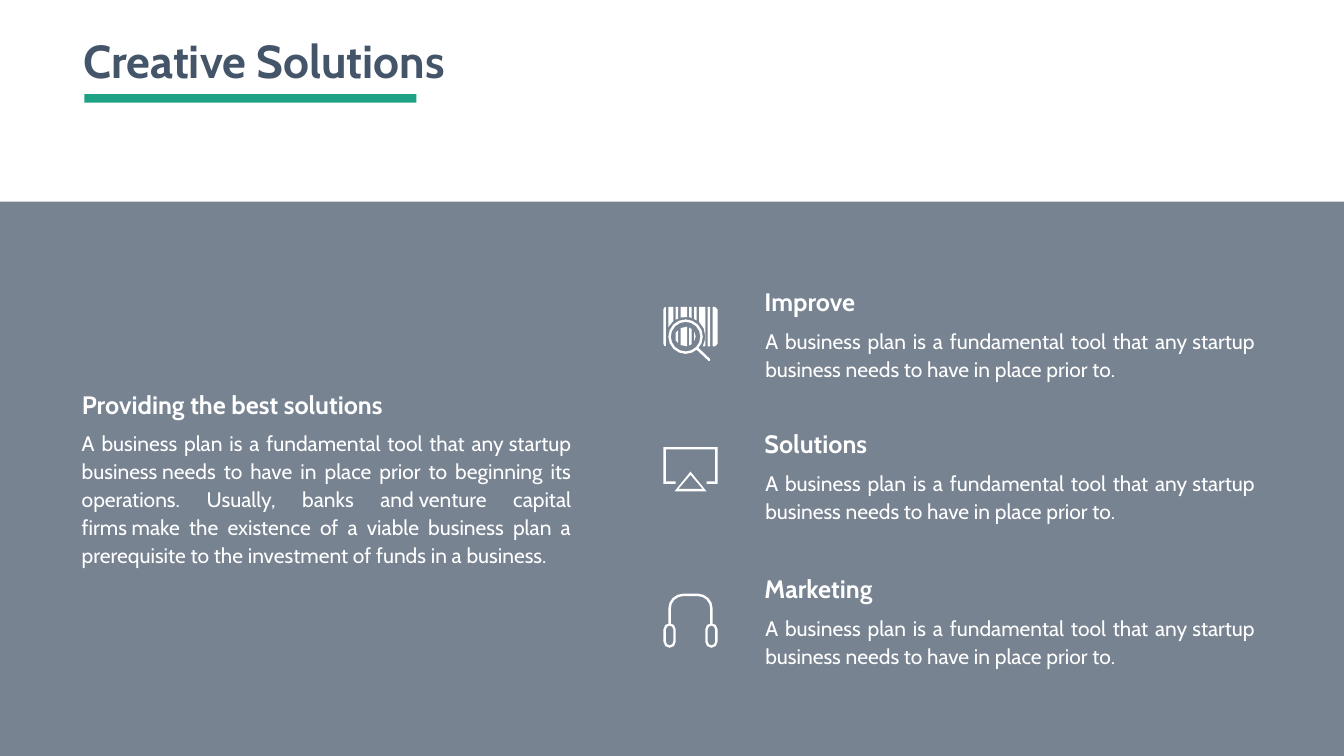
import math
from dataclasses import dataclass

import pptx
import pptx.dml.color
import pptx.enum.shapes
import pptx.enum.text
import pptx.oxml.ns
import pptx.util
from lxml import etree

Cm, Pt = pptx.util.Cm, pptx.util.Pt
Color = pptx.dml.color.RGBColor
Align = pptx.enum.text.PP_ALIGN
Anchor = pptx.enum.text.MSO_ANCHOR


@dataclass(frozen=True)
class Theme:
    font: str = "Cabin"
    slate: Color = Color(0x44, 0x54, 0x69)
    green: Color = Color(0x1E, 0xA1, 0x85)
    white: Color = Color(0xFF, 0xFF, 0xFF)
    title: int = 66
    heading: int = 36
    body: int = 30
    leading: int = 40


theme = Theme()
deck = pptx.Presentation()
deck.slide_width, deck.slide_height = Cm(67.72), Cm(38.1)
page = deck.slides.add_slide(deck.slide_layouts[6])


def write(text, left, top, width, height, size, color, body=False, middle=False, wrap=True):
    box = page.shapes.add_textbox(Cm(left), Cm(top), Cm(width), Cm(height))
    frame = box.text_frame
    frame.word_wrap = wrap
    frame.auto_size = pptx.enum.text.MSO_AUTO_SIZE.SHAPE_TO_FIT_TEXT
    frame.vertical_anchor = Anchor.MIDDLE if middle else Anchor.TOP
    para = frame.paragraphs[0]
    if body:
        frame.margin_left = frame.margin_right = Cm(0.61)
        frame.margin_top = frame.margin_bottom = Cm(0.3)
        para.alignment = Align.JUSTIFY
        para.line_spacing = Pt(theme.leading)
    span = para.add_run()
    span.text = text
    span.font.name = theme.font
    span.font.size = Pt(size)
    span.font.bold = not body
    span.font.color.rgb = color


def arc(x, y, radius, start, stop, steps=4):
    angles = [math.radians(start + (stop - start) * step / steps) for step in range(steps + 1)]
    return [(x + radius * math.cos(angle), y + radius * math.sin(angle)) for angle in angles]


rectangle = pptx.enum.shapes.MSO_SHAPE.RECTANGLE
panel = page.shapes.add_shape(rectangle, 0, Cm(10.16), deck.slide_width, Cm(27.94))
underline = page.shapes.add_shape(rectangle, Cm(4.25), Cm(4.75), Cm(16.73), Cm(0.43))
for shape, color in ((panel, theme.slate), (underline, theme.green)):
    shape.shadow.inherit = False
    shape.fill.solid()
    shape.fill.fore_color.rgb = color
    shape.line.fill.background()
panel_color = panel._element.spPr.find(".//" + pptx.oxml.ns.qn("a:srgbClr"))
etree.SubElement(panel_color, pptx.oxml.ns.qn("a:alpha"), val="72000")

hard_space = chr(160)
opening = (
    f"A business plan is a fundamental tool that any{hard_space}startup "
    f"business{hard_space}needs to have in place prior to"
)
write("Creative Solutions", 3.94, 1.52, 19.61, 3.07, theme.title, theme.slate, wrap=False)
write("Providing the best solutions", 3.88, 19.48, 18.82, 1.8, theme.heading, theme.white, middle=True)
write(
    f"{opening} beginning its operations. Usually, banks and{hard_space}venture capital "
    f"firms{hard_space}make the existence of a viable business plan a prerequisite to the "
    "investment of funds in a business.",
    3.51, 21.26, 25.88, 7.65, theme.body, theme.white, body=True,
)
for heading, top, width in (("Improve", 14.3, 5.28), ("Solutions", 21.47, 5.89), ("Marketing", 28.78, 6.3)):
    write(heading, 38.27, top, width, 1.8, theme.heading, theme.white, middle=True, wrap=False)
    write(f"{opening}.", 37.95, top + 1.82, 25.88, 3.38, theme.body, theme.white, body=True)

bars = [
    (5, 6, 0, 0, 4.7, 5.2), (7, 9.6, 0, 0, 4.1, 4.3), (10.4, 11.5, 0, 0, 4.5, 4.1),
    (12.5, 13.5, 0, 0, 5.5, 4.9), (18, 19, 0, 0, 16, 16), (5, 6, 10.5, 9.4, 14.7, 13.6),
    (7, 9.6, 8.6, 8, 16, 15.5), (10.4, 11.5, 8.4, 9, 15.1, 15.7), (12.5, 13.1, 10, 12, 12, 13.9),
]
barcode = [
    [(left, top_left), (right, top_right), (right, bottom_right), (left, bottom_left)]
    for left, right, top_left, top_right, bottom_right, bottom_left in bars
]
barcode += [
    [(0, 1), (0.3, 0.3), (1, 0), (1, 16), (0.3, 15.7), (0, 15)],
    [(2, 0), (4, 0), (4, 5.7), (2, 8.2)],
    [(14.5, 0), (17, 0), (17, 16), (16, 16), (16.8, 13.5), (17, 12), (16.4, 8.8), (14.5, 6.1)],
    [(20, 0), (21, 0), (22, 1), (22, 15), (21, 16), (20, 16)],
    arc(9, 12.07, 7, 0, 360, 16),
    arc(9, 12.07, 6, 0, 360, 16),
    [(13.5, 17.4), (14.3, 16.7), (19, 21.2), (18.9, 21.9), (18.3, 21.9)],
]
screen = [
    [(5, 15), (0, 15), (0, 0), (22, 0), (22, 15), (17.5, 15),
     (17.5, 14), (21, 14), (21, 1), (1, 1), (1, 14), (5, 14)],
    [(4.5, 18), (11, 10), (17.5, 18)],
    [(6.1, 17), (11, 11.3), (15.9, 17)],
]
headphones = [
    [(2, 12), *arc(8, 6, 6, 180, 270), *arc(14, 6, 6, 270, 360), (20, 12),
     (19, 12), *arc(14, 6, 5, 360, 270), *arc(8, 6, 5, 270, 180), (3, 12)],
]
for x in (2.5, 19.5):
    for radius in (2.5, 1.5):
        headphones.append(arc(x, 14.5, radius, 180, 360) + arc(x, 19.5, radius, 0, 180))

icon_left, unit = 33.43, 0.124
for contours, top in ((barcode, 15.47), (screen, 22.53), (headphones, 29.92)):
    builder = None
    for contour in contours:
        points = [(Cm(icon_left + x * unit), Cm(top + y * unit)) for x, y in contour]
        if builder is None:
            builder = page.shapes.build_freeform(*points[0])
        else:
            builder.move_to(*points[0])
        builder.add_line_segments(points[1:], close=True)
    icon = builder.convert_to_shape()
    icon.shadow.inherit = False
    icon.fill.solid()
    icon.fill.fore_color.rgb = theme.white
    icon.line.fill.background()

deck.save("out.pptx")
